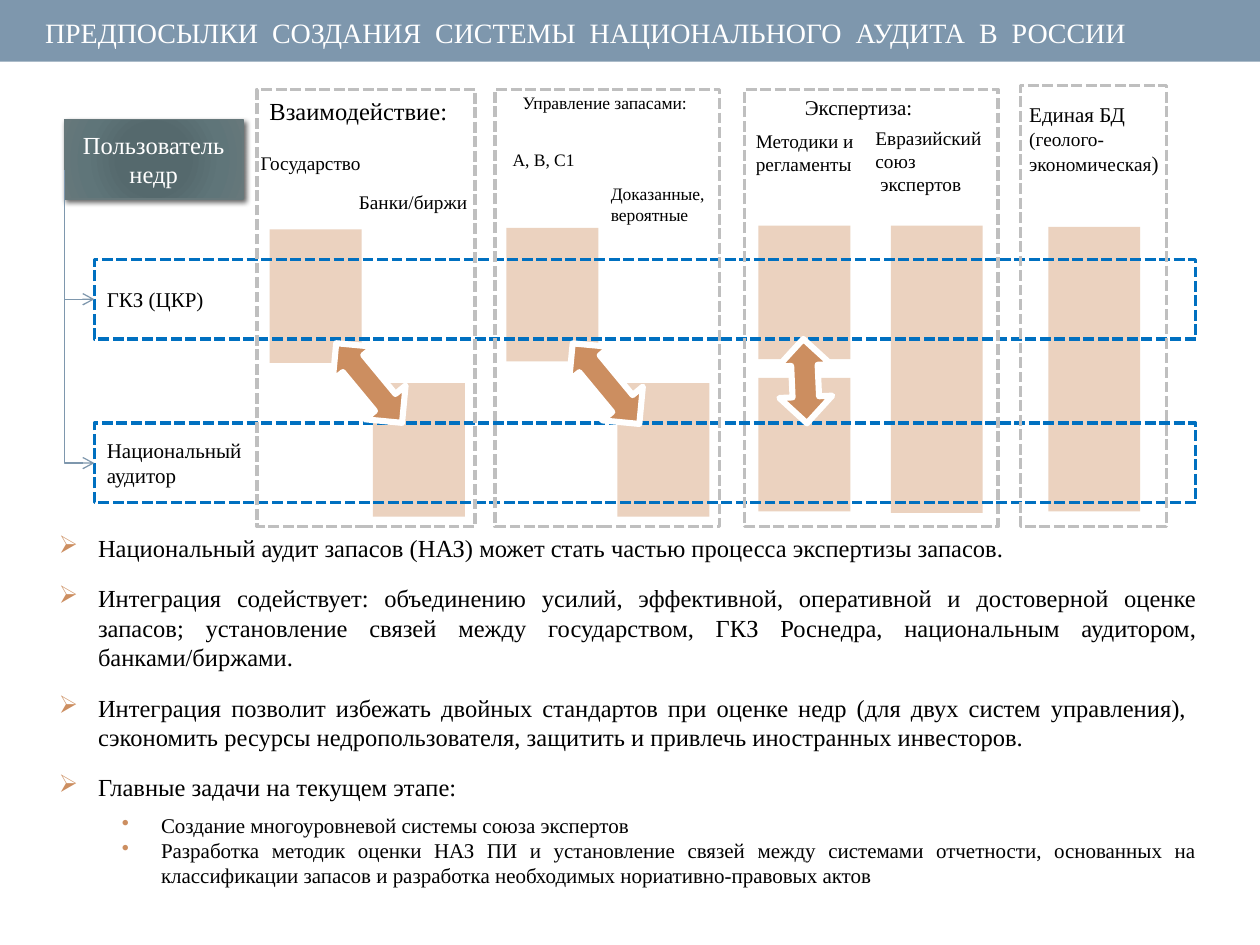
from lxml.etree import SubElement
from pptx import Presentation
from pptx.dml.color import RGBColor
from pptx.enum.dml import MSO_LINE
from pptx.enum.shapes import MSO_CONNECTOR, MSO_SHAPE
from pptx.enum.text import MSO_ANCHOR, MSO_AUTO_SIZE, PP_ALIGN
from pptx.oxml import parse_xml
from pptx.oxml.ns import nsdecls, qn
from pptx.util import Inches, Pt

WIDTH, HEIGHT = Inches(10), Inches(7.5)
COLUMN, ROW = WIDTH / 100, HEIGHT / 75
FONT = "Times New Roman"
BLACK = RGBColor(0x00, 0x00, 0x00)
WHITE = RGBColor(0xFF, 0xFF, 0xFF)
STEEL = RGBColor(0x7E, 0x97, 0xAD)
SAND = RGBColor(0xEB, 0xD2, 0xBF)
COPPER = RGBColor(0xCC, 0x8E, 0x60)
BLUE = RGBColor(0x00, 0x70, 0xC0)
GREY = RGBColor(0xBF, 0xBF, 0xBF)
SLATE = RGBColor(0x67, 0x78, 0x7B)
USER_STOPS = [(0, "546A6E"), (34, "55696D"), (70, "5F7579"), (100, "67787B")]

BLOCK_WIDTH, BLOCK_HEIGHT = 7.3, 10.6
BLOCKS = [
    (60.2, 30, BLOCK_HEIGHT), (60.2, 17.9, BLOCK_HEIGHT),
    (29.6, 30.4, BLOCK_HEIGHT), (21.4, 18.2, BLOCK_HEIGHT),
    (70.7, 17.9, 22.8), (83.2, 18, 22.6),
    (49, 30.4, BLOCK_HEIGHT), (40.2, 18.1, BLOCK_HEIGHT),
]
BANDS = [(20.6, ["ГКЗ (ЦКР)"], 13.5), (33.6, ["Национальный", "аудитор"], 14.7)]
FRAMES = [(39.3, 7.1, 17.8, 34.7), (59.1, 7.1, 20.1, 34.7),
          (81, 6.8, 11.6, 35), (20.4, 7.1, 17.3, 34.7)]
ARROWS = [(46, 26.3, 8.3, 320.4), (27.2, 26.3, 8.2, 320.4), (61.8, 26.9, 6.7, 357.5)]
LABELS = [
    ((20.4, 7.1, 17.3, 3.4), ["Взаимодействие:"], 14, True),
    ((40.5, 6.8, 15.4, 2.7), ["Управление запасами:"], 10, True),
    ((39.7, 11.3, 7.9, 4.4), ["А, В, С1"], 10, True),
    ((62.9, 7, 13.4, 3), ["Экспертиза:"], 12, True),
    ((68.5, 9.5, 10.6, 6.7), ["Евразийский союз", " экспертов"], 11, True),
    ((59, 9.8, 11, 4.7), ["Методики и регламенты"], 11, True),
    ((19.7, 11.5, 10.2, 2.9), ["Государство"], 11, False),
    ((47.5, 14, 9.6, 4.4), ["Доказанные, вероятные"], 10, True),
    ((27.5, 14.6, 10.7, 2.9), ["Банки/биржи"], 11, False),
]
THESES = [
    "Национальный аудит запасов (НАЗ) может стать частью процесса экспертизы запасов. ",
    "Интеграция содействует: объединению усилий, эффективной, оперативной и достоверной "
    "оценке запасов; установление связей между государством, ГКЗ Роснедра, национальным "
    "аудитором, банками/биржами.",
    "Интеграция позволит избежать двойных стандартов при оценке недр (для двух систем "
    "управления),  сэкономить ресурсы недропользователя, защитить и привлечь иностранных "
    "инвесторов.",
    "Главные задачи на текущем этапе:",
]
TASKS = [
    "Создание многоуровневой системы союза экспертов",
    "Разработка методик оценки НАЗ ПИ и установление связей между системами отчетности, "
    "основанных на классификации запасов и разработка необходимых нориативно-правовых актов",
]


def place(left, top, width, height):
    """Turn grid columns and rows into slide lengths."""
    return int(left * COLUMN), int(top * ROW), int(width * COLUMN), int(height * ROW)


def format_run(run, size, color=BLACK):
    """Set the font of one run."""
    run.font.name = FONT
    run.font.size = Pt(size)
    run.font.color.rgb = color


def write(shape, lines, size, color=BLACK, align=PP_ALIGN.LEFT):
    """Fill a shape with one paragraph per line."""
    frame = shape.text_frame
    frame.word_wrap = True
    frame.text = "\n".join(lines)
    for paragraph in frame.paragraphs:
        paragraph.alignment = align
        for run in paragraph.runs:
            format_run(run, size, color)
    return frame


def add_label(slide, box, lines, size, wrap=True):
    """Add a text box that grows with its text."""
    frame = write(slide.shapes.add_textbox(*place(*box)), lines, size)
    frame.word_wrap = wrap
    frame.auto_size = MSO_AUTO_SIZE.SHAPE_TO_FIT_TEXT
    return frame


def add_box(slide, box, fill=None, line=None, weight=2.08, kind=MSO_SHAPE.RECTANGLE):
    """Add a flat preset shape with an optional fill and outline."""
    shape = slide.shapes.add_shape(kind, *place(*box))
    shape.shadow.inherit = False
    if fill is None:
        shape.fill.background()
    else:
        shape.fill.solid()
        shape.fill.fore_color.rgb = fill
    if line is None:
        shape.line.fill.background()
    else:
        shape.line.color.rgb = line
        shape.line.width = Pt(weight)
    return shape


def add_dashed_box(slide, box, color):
    """Add a dashed outline."""
    shape = add_box(slide, box, line=color)
    shape.line.dash_style = MSO_LINE.SQUARE_DOT
    return shape


def add_user_box(slide):
    """Add the subsoil user with a radial gradient and a shadow."""
    shape = add_box(slide, (5.1, 9.5, 14.2, 6.3), line=SLATE, weight=0.75)
    stops = "".join(f'<a:gs pos="{share * 1000}"><a:srgbClr val="{color}"/></a:gs>'
                    for share, color in USER_STOPS)
    gradient = parse_xml(
        f'<a:gradFill {nsdecls("a")}><a:gsLst>{stops}</a:gsLst><a:path path="circle">'
        '<a:fillToRect l="100000" t="100000" r="100000" b="100000"/></a:path></a:gradFill>')
    properties = shape.element.spPr
    properties.replace(properties.find(qn("a:noFill")), gradient)
    properties.find(qn("a:effectLst")).append(parse_xml(
        f'<a:outerShdw {nsdecls("a")} blurRad="{Pt(3)}" dist="{Pt(2)}" dir="2700000">'
        '<a:srgbClr val="000000"><a:alpha val="60000"/></a:srgbClr></a:outerShdw>'))
    write(shape, ["Пользователь недр"], 14, WHITE, PP_ALIGN.CENTER)


def add_bent_arrow(slide, start_x, start_y, end_x, end_y):
    """Add an arrow that runs down and then right."""
    center_x, center_y = (start_x + end_x) / 2, (start_y + end_y) / 2
    half_run, half_rise = (end_y - start_y) / 2, (end_x - start_x) / 2
    begin = place(center_x + half_run, center_y - half_rise, 0, 0)[:2]
    end = place(center_x - half_run, center_y + half_rise, 0, 0)[:2]
    connector = slide.shapes.add_connector(MSO_CONNECTOR.ELBOW, *begin, *end)
    connector.line.color.rgb = STEEL
    connector.line.width = Pt(0.75)
    properties = connector.element.spPr
    properties.find(qn("a:xfrm")).set("rot", "16200000")
    properties.find(qn("a:prstGeom")).set("prst", "bentConnector2")
    SubElement(properties.find(qn("a:ln")), qn("a:tailEnd"), type="arrow")
    SubElement(properties, qn("a:effectLst"))


def set_bullet(paragraph, character, margin):
    """Give a paragraph a coloured bullet and a hanging indent."""
    properties = paragraph._p.get_or_add_pPr()
    properties.set("marL", str(Inches(margin)))
    properties.set("indent", str(Inches(-0.31)))
    color = SubElement(properties, qn("a:buClr"))
    SubElement(color, qn("a:srgbClr"), val=str(COPPER))
    SubElement(properties, qn("a:buChar"), char=character)


def add_theses(slide):
    """Add the bulleted theses and their tasks."""
    frame = add_label(slide, (3.7, 41.8, 92.3, 29.5), THESES + TASKS, 14)
    for index, paragraph in enumerate(frame.paragraphs):
        paragraph.alignment = PP_ALIGN.JUSTIFY
        is_thesis = index < len(THESES)
        paragraph.space_before = paragraph.space_after = Pt(6 if is_thesis else 0)
        if is_thesis:
            set_bullet(paragraph, "➢", 0.31)
        else:
            paragraph.level = 1
            paragraph.runs[0].font.size = Pt(12)
            set_bullet(paragraph, "•", 0.81)


def add_database_label(slide):
    """Add the database heading in its two sizes."""
    lines = ["Единая БД", "(геолого- экономическая"]
    paragraph = add_label(slide, (80.7, 7.6, 13.2, 6.9), lines, 12).paragraphs[1]
    paragraph.runs[0].font.size = Pt(11)
    bracket = paragraph.add_run()
    bracket.text = ")"
    format_run(bracket, 12)


def add_title(slide):
    """Add the title over its bar."""
    add_box(slide, (0, 0, 100, 4.9), STEEL)
    title = slide.shapes.add_textbox(*place(2.6, 0, 90, 5.1))
    text = "ПРЕДПОСЫЛКИ  СОЗДАНИЯ  СИСТЕМЫ  НАЦИОНАЛЬНОГО  АУДИТА  В  РОССИИ "
    frame = write(title, [text], 16, WHITE, PP_ALIGN.JUSTIFY)
    frame.vertical_anchor = MSO_ANCHOR.MIDDLE


def main():
    """Build and save the slide."""
    presentation = Presentation()
    presentation.slide_width, presentation.slide_height = WIDTH, HEIGHT
    slide = presentation.slides.add_slide(presentation.slide_layouts[6])
    add_title(slide)
    for left, top, height in BLOCKS:
        add_box(slide, (left, top, BLOCK_WIDTH, height), SAND)
    add_user_box(slide)
    for top, lines, start in BANDS:
        write(add_dashed_box(slide, (7.5, top, 87.4, 6.3), BLUE), lines, 12)
        add_bent_arrow(slide, 5.1, start, 7.5, top + 3.15)
    for box in FRAMES:
        add_dashed_box(slide, box, GREY)
    for label in LABELS:
        add_label(slide, *label)
    add_database_label(slide)
    for left, top, height, rotation in ARROWS:
        arrow = add_box(slide, (left, top, 4.2, height), COPPER, WHITE, 3.5,
                        MSO_SHAPE.UP_DOWN_ARROW)
        arrow.rotation = rotation
    add_theses(slide)
    presentation.save("out.pptx")


if __name__ == "__main__":
    main()
